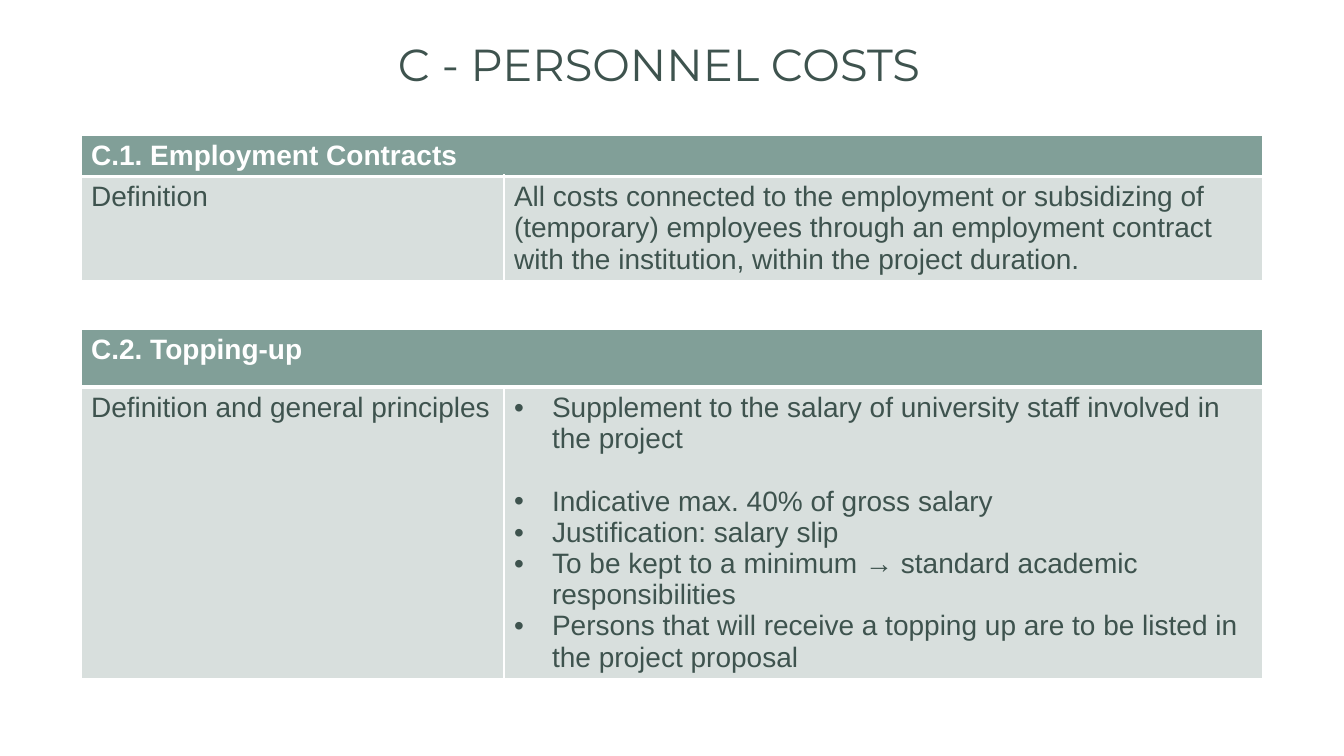
"""Build the personnel costs slide with its two definition tables."""
import pptx
import pptx.dml.color
import pptx.enum.text
import pptx.oxml
import pptx.oxml.ns
import pptx.util

EMU_PER_PX = 914400 / 100.8
COLORS = {"ink": "3E534E", "header": "819F98", "body": "D8DFDD", "white": "FFFFFF"}
TABLE_LEFT = 81
COLUMN_WIDTHS = (423, 759)
BULLET_INDENT = 38
BLANK_LINE = 22.3


def px(length):
    return pptx.util.Emu(round(length * EMU_PER_PX))


def format_runs(paragraph, font_name, size, color, bold=False):
    for run in paragraph.runs:
        run.font.name = font_name
        run.font.size = pptx.util.Pt(size)
        run.font.bold = bold
        run.font.color.rgb = pptx.dml.color.RGBColor.from_string(COLORS[color])


def add_title(slide, text):
    title = slide.shapes.title
    title.left, title.top, title.width, title.height = px(204), px(38), px(922), px(128)
    frame = title.text_frame
    frame.text = text
    frame.word_wrap = True
    frame.vertical_anchor = pptx.enum.text.MSO_ANCHOR.TOP
    paragraph = frame.paragraphs[0]
    paragraph.alignment = pptx.enum.text.PP_ALIGN.CENTER
    paragraph.line_spacing = 0.9
    paragraph.space_before = pptx.util.Pt(10)
    format_runs(paragraph, "Montserrat", 32, "ink")


def set_borders(cell, bottom_width=1):
    properties = cell._tc.get_or_add_tcPr()
    widths = {"lnL": 1, "lnR": 1, "lnT": 1, "lnB": bottom_width}
    for position, (side, width) in enumerate(widths.items()):
        border = pptx.oxml.parse_xml(
            f'<a:{side} {pptx.oxml.ns.nsdecls("a")} w="{pptx.util.Pt(width)}">'
            f'<a:solidFill><a:srgbClr val="{COLORS["white"]}"/></a:solidFill></a:{side}>'
        )
        properties.insert(position, border)


def add_bullet(paragraph):
    properties = paragraph._p.get_or_add_pPr()
    properties.set("marL", str(px(BULLET_INDENT)))
    properties.set("indent", str(-px(BULLET_INDENT)))
    namespace = pptx.oxml.ns.nsdecls("a")
    properties.append(pptx.oxml.parse_xml(f'<a:buFont {namespace} typeface="Arial"/>'))
    properties.append(pptx.oxml.parse_xml(f'<a:buChar {namespace} char="•"/>'))


def fill_cell(cell, text, fill, color, bold=False, bottom_width=1):
    cell.text_frame.text = text
    cell.fill.solid()
    cell.fill.fore_color.rgb = pptx.dml.color.RGBColor.from_string(COLORS[fill])
    set_borders(cell, bottom_width)
    for paragraph in cell.text_frame.paragraphs:
        format_runs(paragraph, "Arial", 20, color, bold)


def add_cost_table(slide, top, row_heights, heading, label, details):
    frame = slide.shapes.add_table(
        2, 2, px(TABLE_LEFT), px(top), px(sum(COLUMN_WIDTHS)), px(sum(row_heights))
    )
    table = frame.table
    for column, width in zip(table.columns, COLUMN_WIDTHS):
        column.width = px(width)
    for row, height in zip(table.rows, row_heights):
        row.height = px(height)
    table.cell(0, 0).merge(table.cell(0, 1))
    fill_cell(table.cell(0, 0), heading, "header", "white", bold=True, bottom_width=3)
    fill_cell(table.cell(1, 0), label, "body", "ink")
    fill_cell(table.cell(1, 1), details, "body", "ink")
    return table


def main():
    presentation = pptx.Presentation()
    presentation.slide_width, presentation.slide_height = px(1344), px(756)
    slide = presentation.slides.add_slide(presentation.slide_layouts[5])
    add_title(slide, "C - PERSONNEL COSTS ")
    add_cost_table(
        slide, 135, (41, 104), "C.1. Employment Contracts", "Definition",
        "All costs connected to the employment or subsidizing of (temporary) employees "
        "through an employment contract with the institution, within the project duration.",
    )
    principles = (
        "Supplement to the salary of university staff involved in the project",
        "Indicative max. 40% of gross salary",
        "Justification: salary slip",
        "To be kept to a minimum → standard academic responsibilities",
        "Persons that will receive a topping up are to be listed in the project proposal",
    )
    topping_up = add_cost_table(
        slide, 329, (58, 291), "C.2. Topping-up", "Definition and general principles",
        "\n".join(principles),
    )
    paragraphs = topping_up.cell(1, 1).text_frame.paragraphs
    paragraphs[0].space_after = pptx.util.Pt(BLANK_LINE)
    for paragraph in paragraphs:
        add_bullet(paragraph)
    presentation.save("out.pptx")


if __name__ == "__main__":
    main()
